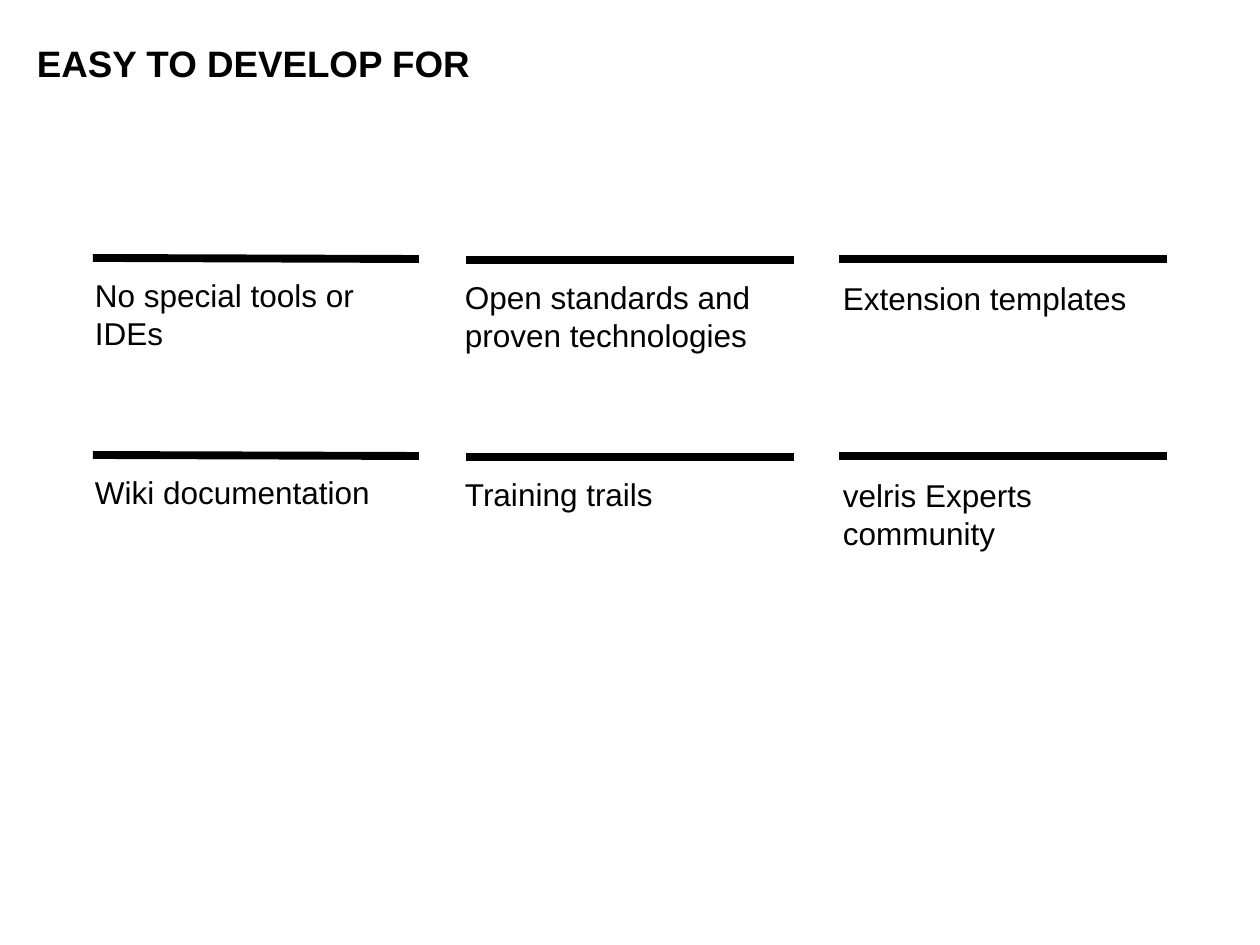
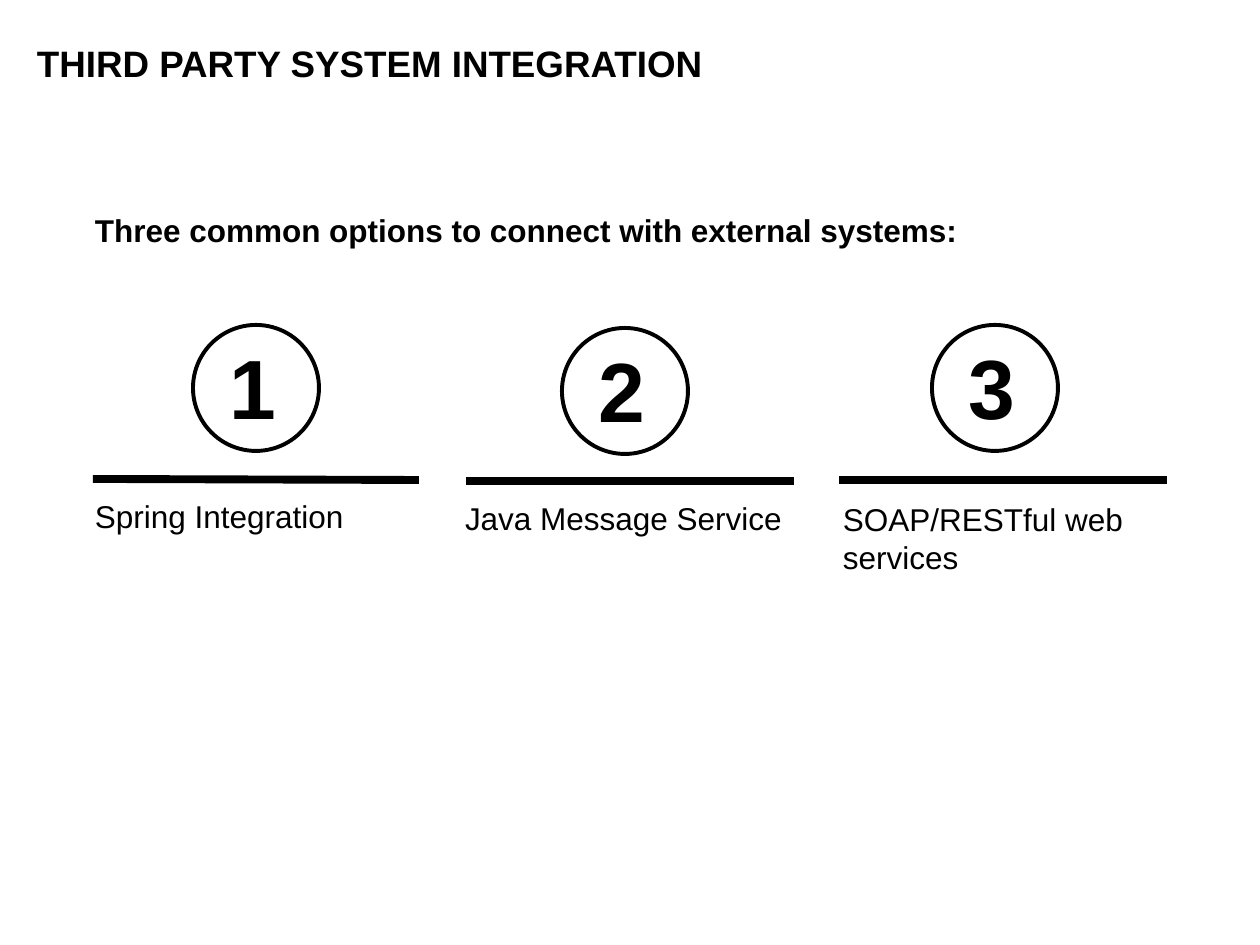
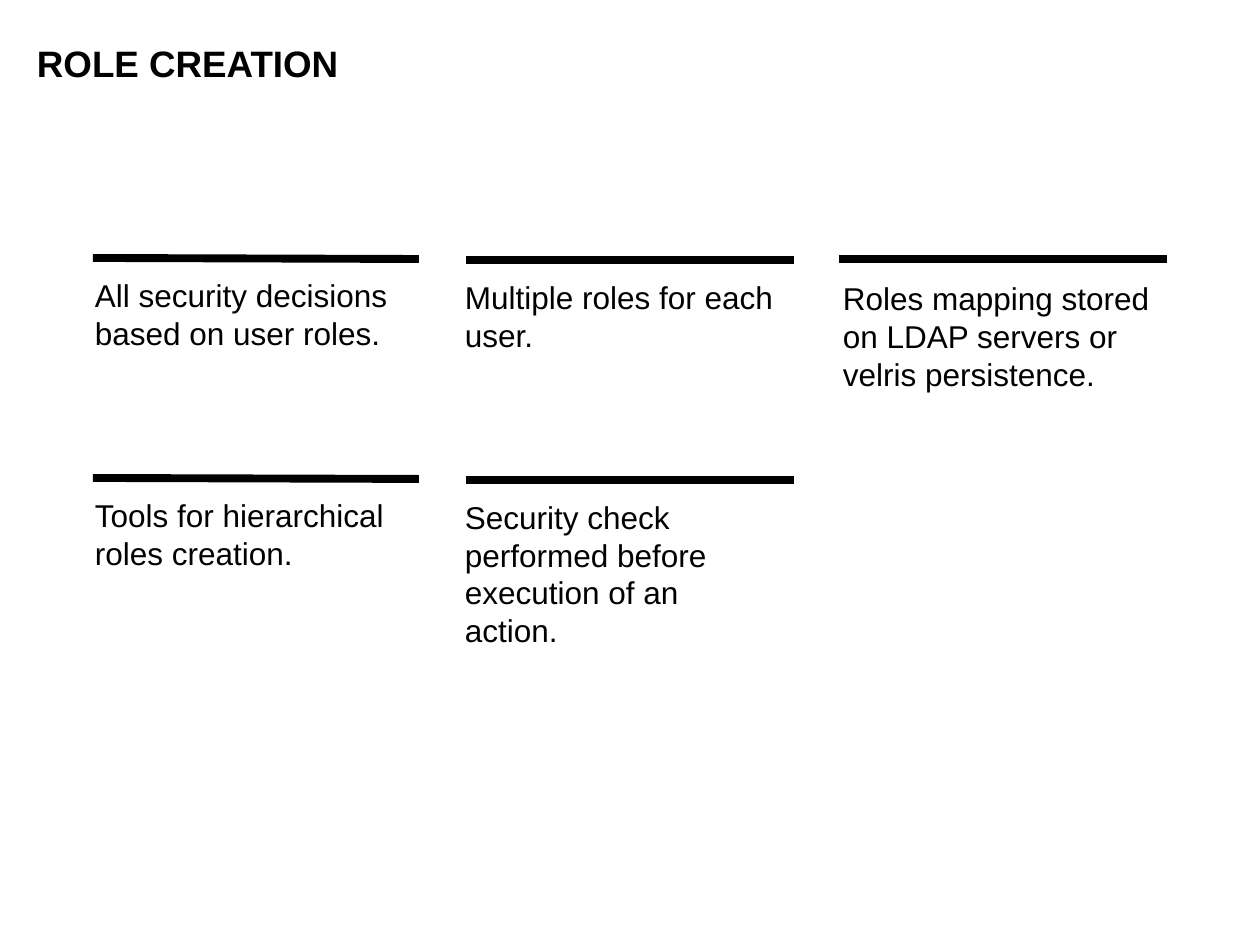
from dataclasses import dataclass

from lxml import etree
from pptx import Presentation
from pptx.dml.color import RGBColor
from pptx.enum.shapes import MSO_CONNECTOR, MSO_SHAPE
from pptx.enum.text import MSO_ANCHOR, MSO_AUTO_SIZE
from pptx.oxml.ns import qn
from pptx.util import Pt

# Shared measures and style
PX = 914400 // 126
SLIDE_WIDTH, SLIDE_HEIGHT = 1260, 945
FONT = "Arial"
BLACK = RGBColor(0, 0, 0)
STRAIGHT = MSO_CONNECTOR.STRAIGHT
ELLIPSE = MSO_SHAPE.OVAL
TOP, MIDDLE = MSO_ANCHOR.TOP, MSO_ANCHOR.MIDDLE
FIT_TEXT, FIXED = MSO_AUTO_SIZE.SHAPE_TO_FIT_TEXT, MSO_AUTO_SIZE.NONE

TITLE_BOX = (37, 39, 1061, 53)
HEADING_BOX = (95, 215, 1165, 730)
CAPTION_INSETS = (0, 3, 16, 9)
NUMBER_INSETS = (0, 6, 13, 6)
LINE_HEIGHT, CAPTION_PADDING = 38, 11
CIRCLE_SIZE = 126
COLUMN_LEFT, COLUMN_PITCH = 93, 373


@dataclass
class Column:
    """Offsets of a column's parts from its left edge and its row's top."""
    rule_width: int
    rule_start: int
    rule_end: int
    caption_left: int
    caption_top: int
    caption_width: int
    circle_left: int
    circle_top: int


@dataclass
class Topic:
    text: str
    lines: int = 1
    extra_width: int = 0


COLUMNS = [
    Column(326, 0, 1, 2, 15, 326, 100, -154),
    Column(328, 2, 2, -1, 17, 328, 96, -151),
    Column(328, 1, 1, 4, 18, 324, 93, -154),
]


def px(*lengths):
    return [length * PX for length in lengths]


def add_text(shapes, box, text, size, bold=False, insets=(0, 0, 0, 0),
             anchor=TOP, fit=FIT_TEXT, wrap=True, spacing=None):
    shape = shapes.add_textbox(*px(*box))
    frame = shape.text_frame
    (frame.margin_left, frame.margin_top,
     frame.margin_right, frame.margin_bottom) = px(*insets)
    frame.word_wrap = wrap
    frame.auto_size = fit
    frame.vertical_anchor = anchor
    paragraph = frame.paragraphs[0]
    paragraph.line_spacing = spacing
    run = paragraph.add_run()
    run.text = text
    run.font.name = FONT
    run.font.size = Pt(size)
    run.font.bold = bold
    run.font.color.rgb = BLACK


def add_rule(shapes, left, top, right, bottom):
    rule = shapes.add_connector(STRAIGHT, *px(left, top, right, bottom))
    rule.line.color.rgb = BLACK
    rule.line.width = Pt(4.5)
    etree.SubElement(rule.line._get_or_add_ln().getparent(), qn("a:effectLst"))


def add_numbered_circle(shapes, left, top, number):
    circle = shapes.add_shape(
        ELLIPSE, *px(left, top, CIRCLE_SIZE, CIRCLE_SIZE))
    circle.shadow.inherit = False
    circle.fill.background()
    circle.line.color.rgb = BLACK
    circle.line.width = Pt(2.25)
    add_text(shapes, (left + 37, top + 3, 60, 115), str(number), 48, bold=True,
             insets=NUMBER_INSETS, anchor=MIDDLE, wrap=False)


def add_topic(slide, index, top, topic, numbered):
    """A caption under a thick rule, with an optional number above it."""
    column = COLUMNS[index]
    left = COLUMN_LEFT + index * COLUMN_PITCH
    shapes = slide.shapes.add_group_shape().shapes
    caption_box = (left + column.caption_left, top + column.caption_top,
                   column.caption_width + topic.extra_width,
                   CAPTION_PADDING + topic.lines * LINE_HEIGHT)
    add_text(shapes, caption_box, topic.text, 18, insets=CAPTION_INSETS)
    add_rule(shapes, left, top + column.rule_start,
             left + column.rule_width, top + column.rule_end)
    if numbered:
        add_numbered_circle(shapes, left + column.circle_left,
                            top + column.circle_top, index + 1)


def add_topic_slide(presentation, title, rows, heading=None, numbered=False):
    """A titled slide whose rows map a top edge to a list of topics."""
    slide = presentation.slides.add_slide(presentation.slide_layouts[6])
    add_text(slide.shapes, TITLE_BOX, title, 21, bold=True,
             insets=(0, 6, 0, 6), anchor=MIDDLE, spacing=0.9)
    if heading:
        add_text(slide.shapes, HEADING_BOX, heading, 18, bold=True,
                 fit=FIXED, spacing=0.9)
    for top, topics in rows.items():
        for index, topic in enumerate(topics):
            add_topic(slide, index, top, topic, numbered)


def main():
    presentation = Presentation()
    presentation.slide_width, presentation.slide_height = px(
        SLIDE_WIDTH, SLIDE_HEIGHT)

    add_topic_slide(presentation, "EASY TO DEVELOP FOR", {
        258: [Topic("No special tools or IDEs", 2),
              Topic("Open standards and proven technologies", 2),
              Topic("Extension templates")],
        455: [Topic("Wiki documentation", extra_width=34),
              Topic("Training trails"),
              Topic("velris Experts community", 2)],
    })
    add_topic_slide(presentation, "THIRD PARTY SYSTEM INTEGRATION", {
        479: [Topic("Spring Integration"),
              Topic("Java Message Service", extra_width=19),
              Topic("SOAP/RESTful web services", 2)],
    }, heading="Three common options to connect with external systems:",
        numbered=True)
    add_topic_slide(presentation, "ROLE CREATION", {
        258: [Topic("All security decisions based on user roles.", 2),
              Topic("Multiple roles for each user.", 2),
              Topic("Roles mapping stored on LDAP servers or "
                    "velris persistence.", 3)],
        478: [Topic("Tools for hierarchical roles creation.", 2, 34),
              Topic("Security check performed before execution "
                    "of an action.", 4)],
    })
    presentation.save("out.pptx")


if __name__ == "__main__":
    main()
